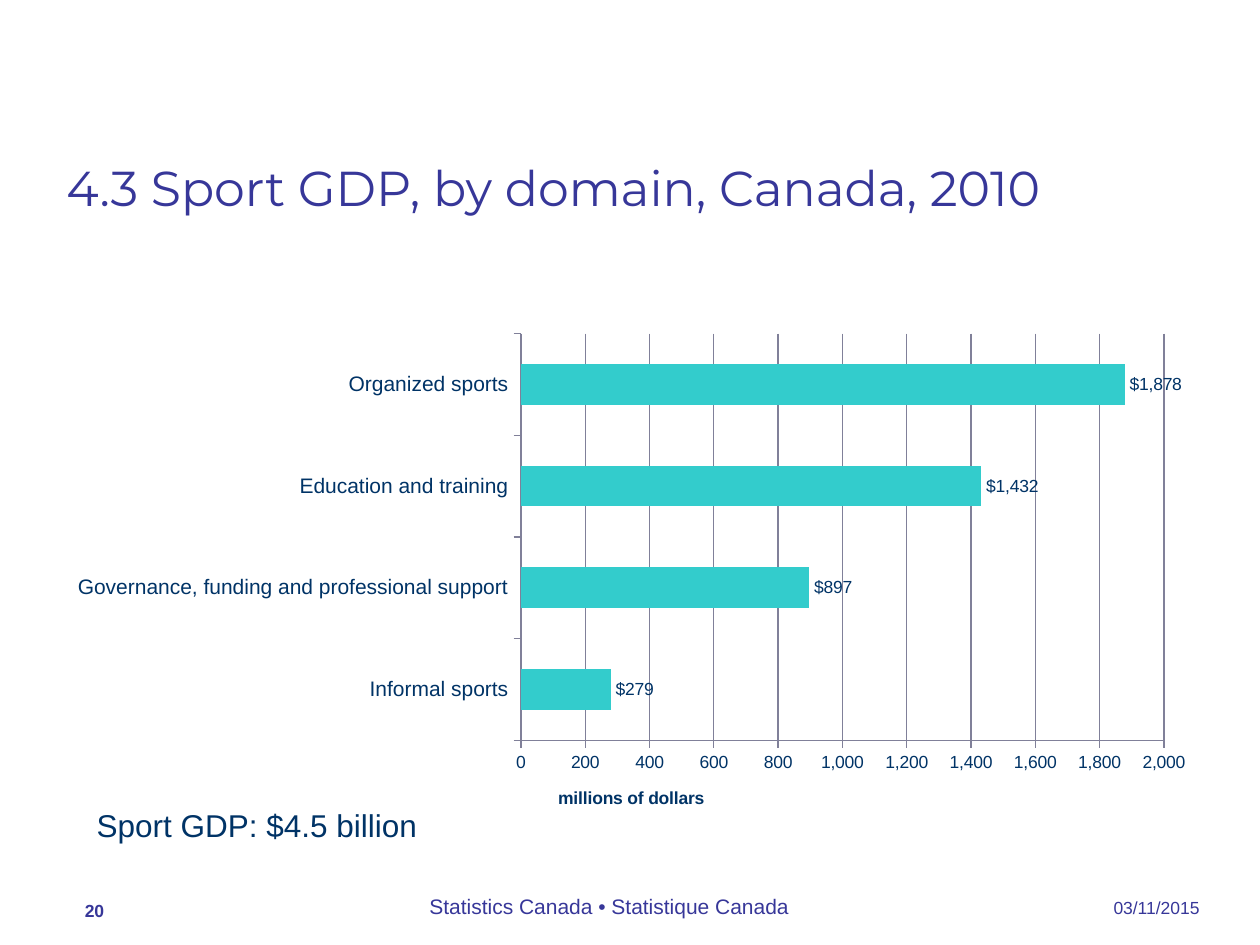
from dataclasses import dataclass

from lxml import etree
from pptx import Presentation
from pptx import util as u
from pptx.chart import data as cd
from pptx.dml.color import RGBColor
from pptx.enum import chart as ce
from pptx.enum import text
from pptx.oxml.ns import qn

COLORS = {"purple": "373799", "navy": "003366", "teal": "33CCCC", "axis": "808099"}
AL = text.PP_ALIGN
AN = text.MSO_ANCHOR


@dataclass
class Label:
    wording: str
    box: tuple
    size: int
    color: str = "purple"
    align: AL = AL.LEFT
    anchor: AN = AN.BOTTOM
    bold: bool = False
    inset: float = 0.25


LABELS = [
    Label("03/11/2015", (21.51, 17.32, 2.92, 1.32), 10, align=AL.RIGHT),
    Label("Statistics Canada • Statistique Canada", (3.89, 17.32, 16.79, 1.32), 12,
          align=AL.CENTER),
    Label("20", (1.09, 17.35, 1.63, 1.35), 10, bold=True, inset=0.62),
    Label("Sport GDP: $4.5 billion", (1.7, 16.13, 10.39, 1.02), 18, "navy",
          anchor=AN.TOP),
]
DOMAINS = {
    "Informal sports": 279,
    "Governance, funding and professional support": 897,
    "Education and training": 1432,
    "Organized sports": 1878,
}


def rgb(name: str) -> RGBColor:
    return RGBColor.from_string(COLORS[name])


def cm(box: tuple) -> list:
    return [u.Cm(v) for v in box]


def format_font(font, *, size: int, color: str, name: str = "Arial",
                bold: bool = False) -> None:
    font.name, font.size, font.bold = name, u.Pt(size), bold
    font.color.rgb = rgb(color)


def write(tf, wording: str, *, align: AL = AL.LEFT, anchor: AN = AN.TOP,
          inset: float = 0.25, **style) -> None:
    tf.word_wrap = True
    tf.auto_size = text.MSO_AUTO_SIZE.NONE
    tf.vertical_anchor = anchor
    tf.margin_left = u.Cm(inset)
    p = tf.paragraphs[0]
    p.alignment = align
    r = p.add_run()
    r.text = wording
    format_font(r.font, **style)


def add_title(s, wording: str, box: tuple) -> None:
    sp = s.shapes.title
    sp.left, sp.top, sp.width, sp.height = cm(box)
    geom = etree.SubElement(sp.element.spPr, qn("a:prstGeom"), prst="roundRect")
    guides = etree.SubElement(geom, qn("a:avLst"))
    etree.SubElement(guides, qn("a:gd"), name="adj", fmla="val 21700")
    write(sp.text_frame, wording, anchor=AN.MIDDLE, inset=0.25, size=28,
          color="purple", name="Montserrat")
    sp.text_frame.margin_bottom = u.Cm(0.41)


def add_label(s, label: Label) -> None:
    sp = s.shapes.add_textbox(*cm(label.box))
    write(sp.text_frame, label.wording, align=label.align, anchor=label.anchor,
          inset=label.inset, size=label.size, color=label.color, bold=label.bold)


def set_layout(parent, after: str, **values) -> None:
    for old in parent.findall(qn("c:layout")):
        parent.remove(old)
    layout = etree.Element(qn("c:layout"))
    manual = etree.SubElement(layout, qn("c:manualLayout"))
    for tag, val in values.items():
        etree.SubElement(manual, qn(f"c:{tag}")).set("val", str(val))
    if after:
        parent.find(qn(after)).addnext(layout)
    else:
        parent.insert(0, layout)


def style_axis(axis, size: int) -> None:
    format_font(axis.tick_labels.font, size=size, color="navy")
    axis.major_tick_mark = ce.XL_TICK_MARK.OUTSIDE
    axis.minor_tick_mark = ce.XL_TICK_MARK.NONE
    axis.format.line.color.rgb = rgb("axis")
    axis.format.line.width = u.Pt(0.75)


def add_gdp_chart(s, box: tuple) -> None:
    data = cd.CategoryChartData()
    data.categories = list(DOMAINS)
    data.add_series("Series 1", list(DOMAINS.values()))
    chart = s.shapes.add_chart(ce.XL_CHART_TYPE.BAR_CLUSTERED, *cm(box), data).chart
    chart.has_legend = chart.has_title = False
    format_font(chart.font, size=10, color="navy")

    plot = chart.plots[0]
    plot.gap_width = 150
    plot.vary_by_categories = False
    fill = plot.series[0].format.fill
    fill.solid()
    fill.fore_color.rgb = rgb("teal")
    plot.has_data_labels = True
    labels = plot.data_labels
    labels.show_value = True
    labels.position = ce.XL_LABEL_POSITION.OUTSIDE_END
    labels.number_format, labels.number_format_is_linked = '"$"#,##0', False
    format_font(labels.font, size=10, color="navy")

    style_axis(chart.category_axis, 12)
    axis = chart.value_axis
    style_axis(axis, 10)
    axis.minimum_scale, axis.maximum_scale, axis.major_unit = 0, 2000, 200
    axis.tick_labels.number_format = "#,##0"
    axis.tick_labels.number_format_is_linked = False
    axis.has_major_gridlines = True
    axis.major_gridlines.format.line.color.rgb = rgb("axis")
    axis.major_gridlines.format.line.width = u.Pt(0.75)

    r = axis.axis_title.text_frame.paragraphs[0].add_run()
    r.text = "millions of dollars"
    format_font(r.font, size=10, color="navy", bold=True)

    plot_area = chart.element.find(f".//{qn('c:plotArea')}")
    set_layout(plot_area, "", layoutTarget="inner", xMode="edge", yMode="edge",
               x=0.4045, y=0.019, w=0.557, h=0.797)
    title = plot_area.find(f"{qn('c:valAx')}/{qn('c:title')}")
    set_layout(title, "c:tx", xMode="edge", yMode="edge", x=0.434, y=0.9)


def main() -> None:
    prs = Presentation()
    prs.slide_width, prs.slide_height = u.Cm(25.4), u.Cm(19.05)
    s = prs.slides.add_slide(prs.slide_layouts[5])
    add_gdp_chart(s, (1.09, 6.53, 23.27, 10.29))
    add_title(s, "4.3 Sport GDP, by domain, Canada, 2010", (1.09, 2.92, 23.22, 1.96))
    for label in LABELS:
        add_label(s, label)
    prs.save("out.pptx")


if __name__ == "__main__":
    main()
